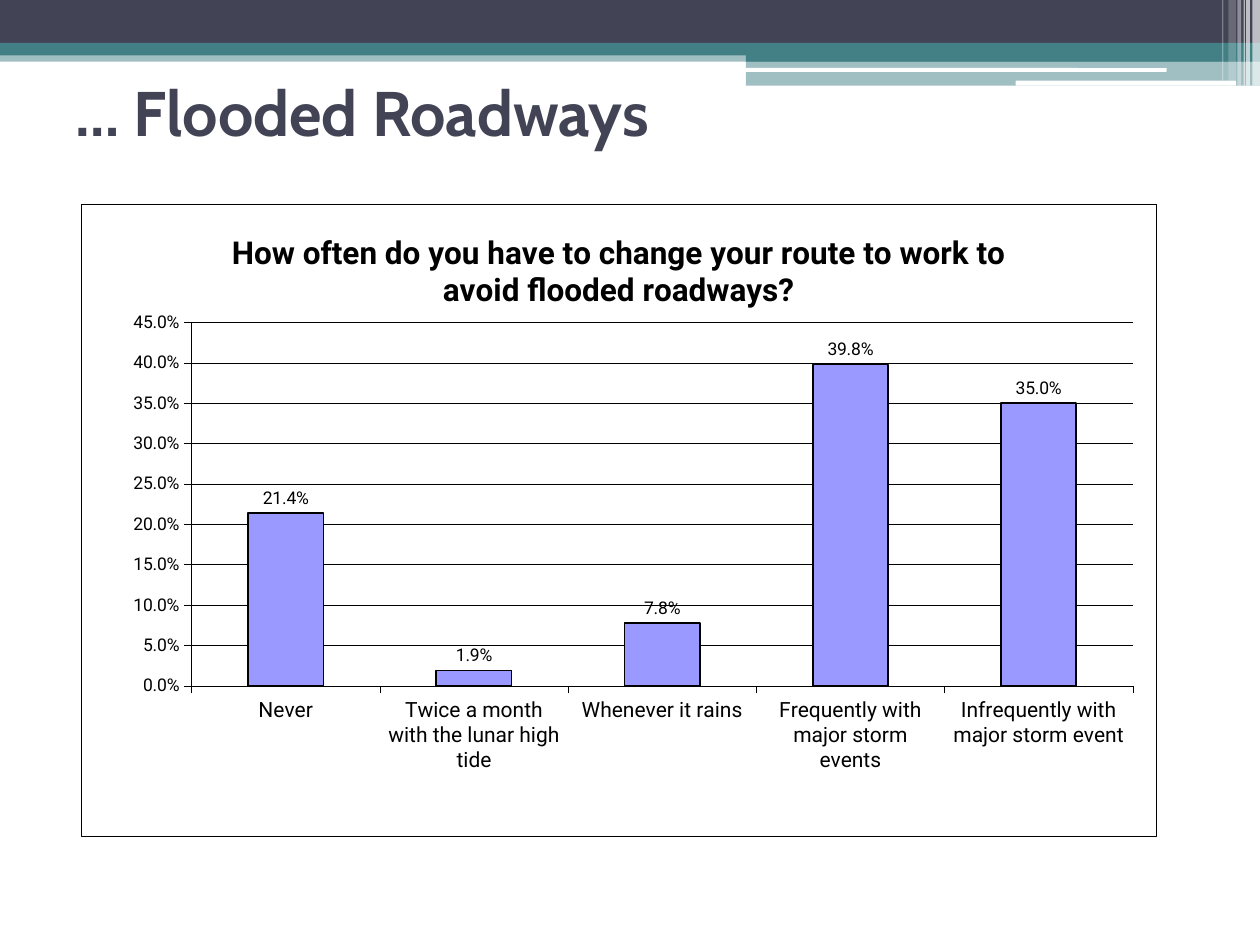
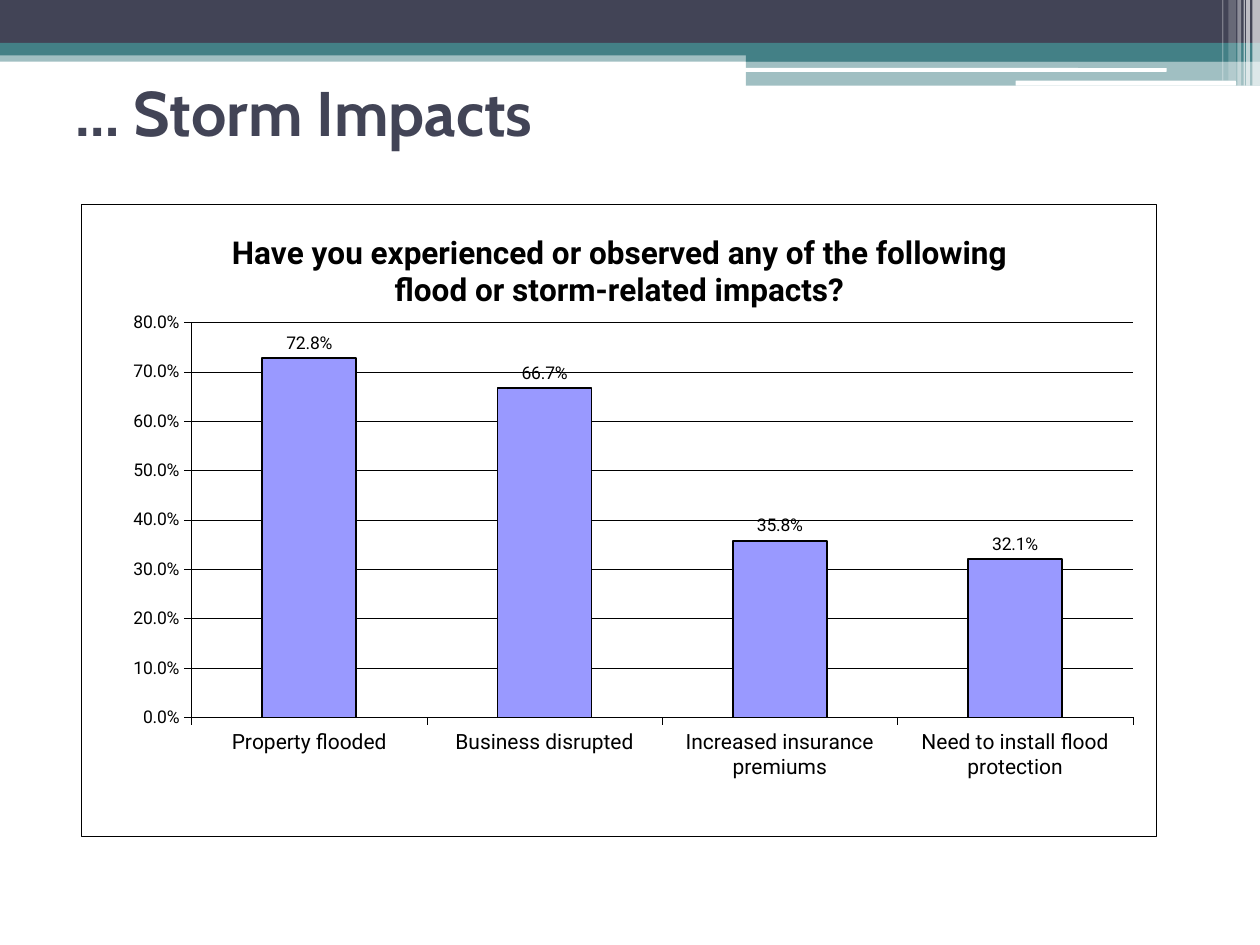
"""Build two survey result slides with a shared banded header and column charts."""
from dataclasses import dataclass

from lxml import etree
from pptx import Presentation
from pptx.chart.chart import Chart
from pptx.chart.data import CategoryChartData
from pptx.dml.color import RGBColor
from pptx.enum.chart import XL_CHART_TYPE, XL_LABEL_POSITION, XL_TICK_MARK
from pptx.enum.shapes import MSO_SHAPE
from pptx.enum.text import MSO_ANCHOR
from pptx.oxml import parse_xml
from pptx.oxml.ns import nsdecls, qn
from pptx.slide import Slide
from pptx.util import Inches, Pt

RECT = MSO_SHAPE.RECTANGLE
ROUND = MSO_SHAPE.ROUNDED_RECTANGLE
COLUMN = XL_CHART_TYPE.COLUMN_CLUSTERED
OUTSIDE = XL_TICK_MARK.OUTSIDE
NO_TICK = XL_TICK_MARK.NONE
OUTSIDE_END = XL_LABEL_POSITION.OUTSIDE_END
MIDDLE = MSO_ANCHOR.MIDDLE

COLORS = {
    "navy": "424456",
    "teal": "438086",
    "white": "FFFFFF",
    "black": "000000",
    "bar": "9999FF",
}
TITLE_FONT = "Cabin"
CHART_FONT = "Roboto"
PERCENT = "0.0%"
HAIRLINE = 0.25


@dataclass
class Band:
    left: float
    top: float
    width: float
    height: float
    color: str
    alpha: int = 100
    shape: int = RECT


@dataclass
class Survey:
    title: str
    question: str
    answers: dict[str, float]
    axis_max: float
    axis_step: float
    plot_height: float


BANDS = [
    Band(0, 0.4, 10, 0.09, "teal", 50),
    Band(0, 0, 10, 0.34, "navy"),
    Band(0, 0.34, 10, 0.1, "teal"),
    Band(5.92, 0.39, 4.08, 0.1, "teal"),
    Band(5.92, 0.48, 4.08, 0.2, "teal", 50),
    Band(5.91, 0.54, 3.35, 0.03, "white", shape=ROUND),
    Band(8.06, 0.64, 1.75, 0.04, "white", shape=ROUND),
    Band(9.94, 0, 0.06, 0.68, "white", 65),
    Band(9.89, 0, 0.03, 0.68, "white", 65),
    Band(9.87, 0, 0.01, 0.68, "white", 60),
    Band(9.82, 0, 0.03, 0.68, "white", 40),
    Band(9.75, 0, 0.06, 0.64, "white", 20),
    Band(9.7, 0, 0.01, 0.64, "white", 30),
]

SURVEYS = [
    Survey(
        "… Flooded Roadways",
        "How often do you have to change your route to work to avoid flooded roadways?",
        {
            "Never": 0.214,
            "Twice a month with the lunar high tide": 0.019,
            "Whenever it rains": 0.078,
            "Frequently with major storm events": 0.398,
            "Infrequently with major storm event": 0.35,
        },
        0.45, 0.05, 0.575,
    ),
    Survey(
        "… Storm Impacts",
        "Have you experienced or observed any of the following flood or storm-related impacts?",
        {
            "Property flooded": 0.728,
            "Business disrupted": 0.667,
            "Increased insurance premiums": 0.358,
            "Need to install flood protection": 0.321,
        },
        0.8, 0.1, 0.625,
    ),
]


def rgb(name: str) -> RGBColor:
    return RGBColor.from_string(COLORS[name])


def style_font(font, name: str, size: float, color: str = "black", bold: bool = False) -> None:
    font.name, font.size, font.bold = name, Pt(size), bold
    font.color.rgb = rgb(color)


def style_line(line, width: float = HAIRLINE) -> None:
    line.color.rgb = rgb("black")
    line.width = Pt(width)


def add_band(slide: Slide, band: Band) -> None:
    sp = slide.shapes.add_shape(
        band.shape, Inches(band.left), Inches(band.top), Inches(band.width), Inches(band.height)
    )
    sp.shadow.inherit = False
    sp.line.fill.background()
    sp.fill.solid()
    sp.fill.fore_color.rgb = rgb(band.color)
    if band.alpha < 100:
        clr = sp.fill._xPr.find(qn("a:solidFill")).find(qn("a:srgbClr"))
        etree.SubElement(clr, qn("a:alpha")).set("val", str(band.alpha * 1000))


def add_text(slide: Slide, text: str, *, left: float, top: float, width: float, height: float,
             font: str, size: float, color: str, bold: bool = False) -> None:
    sp = slide.shapes.add_textbox(Inches(left), Inches(top), Inches(width), Inches(height))
    tf = sp.text_frame
    tf.word_wrap = True
    tf.vertical_anchor = MIDDLE
    r = tf.paragraphs[0].add_run()
    r.text = text
    style_font(r.font, font, size, color, bold)


def set_layout(parent, index: int, target: str = "", **box: float) -> None:
    for old in parent.findall(qn("c:layout")):
        parent.remove(old)
    layout = etree.Element(qn("c:layout"))
    manual = etree.SubElement(layout, qn("c:manualLayout"))
    if target:
        etree.SubElement(manual, qn("c:layoutTarget")).set("val", target)
    for mode in ("xMode", "yMode"):
        etree.SubElement(manual, qn(f"c:{mode}")).set("val", "edge")
    for key, value in box.items():
        etree.SubElement(manual, qn(f"c:{key}")).set("val", str(value))
    parent.insert(index, layout)


def area_format(border: str):
    return parse_xml(
        f'<c:spPr {nsdecls("c", "a")}><a:solidFill><a:srgbClr val="{COLORS["white"]}"/></a:solidFill>'
        f"{border}</c:spPr>"
    )


def style_areas(chart: Chart, plot_height: float) -> None:
    space = chart._chartSpace
    plot_area = space.chart.plotArea
    set_layout(plot_area, 0, "inner", x=0.103, y=0.187, w=0.875, h=plot_height)
    plot_area.append(area_format("<a:ln><a:noFill/></a:ln>"))
    border = (
        f'<a:ln w="{Pt(HAIRLINE)}"><a:solidFill><a:srgbClr val="{COLORS["black"]}"/>'
        "</a:solidFill></a:ln>"
    )
    space.chart.addnext(area_format(border))


def style_axes(chart: Chart, survey: Survey) -> None:
    for axis, size in ((chart.category_axis, 12), (chart.value_axis, 10)):
        axis.major_tick_mark = OUTSIDE
        axis.minor_tick_mark = NO_TICK
        style_font(axis.tick_labels.font, CHART_FONT, size)
        style_line(axis.format.line)
    axis = chart.value_axis
    axis.minimum_scale, axis.maximum_scale = 0, survey.axis_max
    axis.major_unit = survey.axis_step
    axis.has_major_gridlines = True
    style_line(axis.major_gridlines.format.line)
    axis.tick_labels.number_format = PERCENT
    axis.tick_labels.number_format_is_linked = False


def style_columns(chart: Chart) -> None:
    plot = chart.plots[0]
    plot.vary_by_categories = False
    plot.gap_width = 150
    series = plot.series[0]
    series.format.fill.solid()
    series.format.fill.fore_color.rgb = rgb("bar")
    style_line(series.format.line, 1)
    labels = series.data_labels
    labels.show_value = True
    labels.position = OUTSIDE_END
    labels.number_format = PERCENT
    labels.number_format_is_linked = False
    style_font(labels.font, CHART_FONT, 10)


def add_survey_chart(slide: Slide, survey: Survey) -> None:
    data = CategoryChartData(number_format=PERCENT)
    data.categories = list(survey.answers)
    data.add_series("Series 1", list(survey.answers.values()))
    chart = slide.shapes.add_chart(
        COLUMN, Inches(0.64), Inches(1.62), Inches(8.54), Inches(5.02), data
    ).chart
    style_font(chart.font, CHART_FONT, 10)
    chart.has_legend = False
    chart.has_title = True
    r = chart.chart_title.text_frame.paragraphs[0].add_run()
    r.text = survey.question
    style_font(r.font, CHART_FONT, 18, bold=True)
    set_layout(chart.chart_title._element, 1, x=0.135, y=0.035)
    style_axes(chart, survey)
    style_columns(chart)
    style_areas(chart, survey.plot_height)


def main() -> None:
    prs = Presentation()
    prs.slide_width, prs.slide_height = Inches(10), Inches(7.5)
    for survey in SURVEYS:
        slide = prs.slides.add_slide(prs.slide_layouts[6])
        for band in BANDS:
            add_band(slide, band)
        add_text(slide, survey.title, left=0.5, top=0.3, width=9, height=1.17,
                 font=TITLE_FONT, size=36, color="navy", bold=True)
        add_survey_chart(slide, survey)
    prs.save("out.pptx")


if __name__ == "__main__":
    main()
